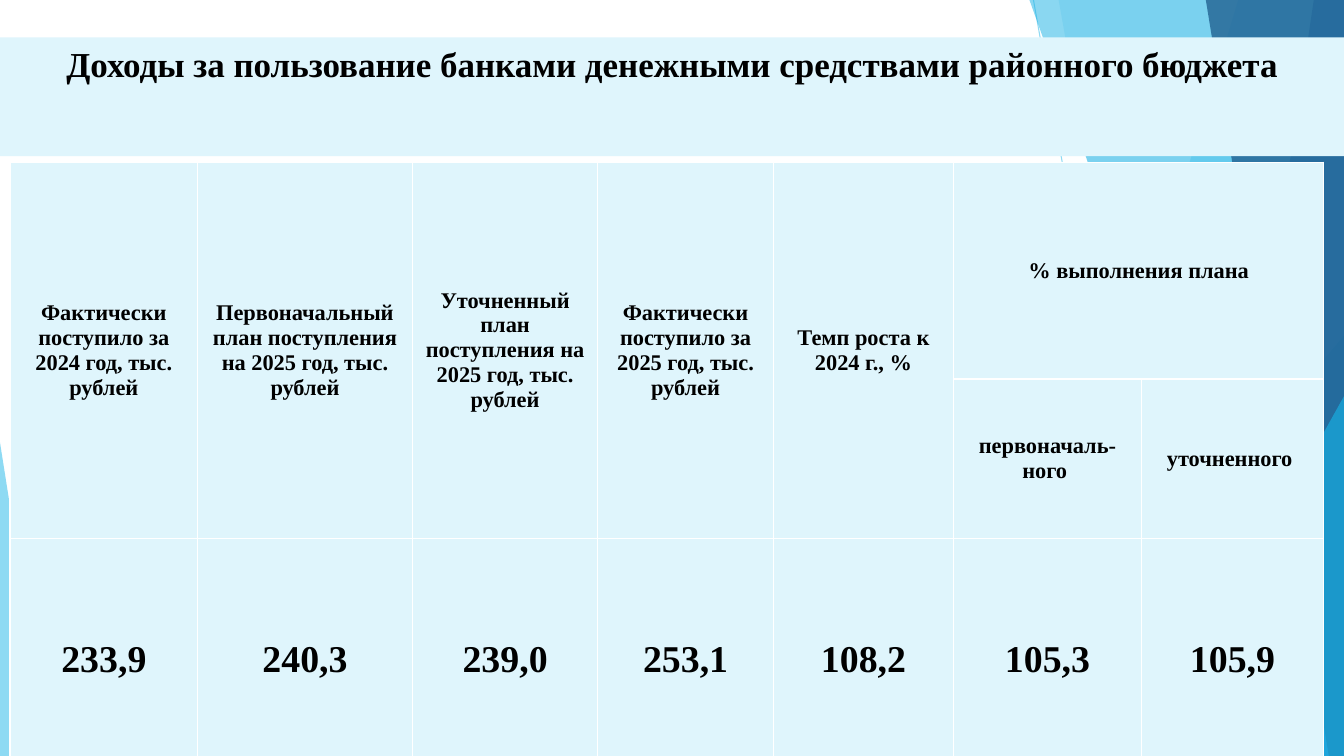
"""Slide with a table of the income from bank use of district budget funds."""
import pptx
import pptx.util
import pptx.dml.color
import pptx.enum.shapes
import pptx.enum.text
import pptx.oxml.ns
import lxml.etree

Inches = pptx.util.Inches
qn = pptx.oxml.ns.qn
WIDE, TALL = 13.33, 7.5
PALE = "DFF5FC"


def tint(fill, code, share=100):
    fill.solid()
    fill.fore_color.rgb = pptx.dml.color.RGBColor.from_string(code)
    if share < 100:
        mark = fill._xPr.find(".//" + qn("a:srgbClr"))
        lxml.etree.SubElement(mark, qn("a:alpha")).set("val", str(share * 1000))


def write(frame, text, size, anchor):
    frame.text = text
    frame.word_wrap = True
    frame.vertical_anchor = anchor
    para = frame.paragraphs[0]
    para.alignment = pptx.enum.text.PP_ALIGN.CENTER
    font = para.runs[0].font
    font.name = "Times New Roman"
    font.size = pptx.util.Pt(size)
    font.bold = True
    tint(font.fill, "000000")


deck = pptx.Presentation()
deck.slide_width, deck.slide_height = Inches(WIDE), Inches(TALL)
slide = deck.slides.add_slide(deck.slide_layouts[5])
shapes = slide.shapes
title = shapes.title

rays = [(10.25, 0, 11.58, TALL), (WIDE, 4.03, 8.12, TALL)]
for ray in rays:
    line = shapes.add_connector(
        pptx.enum.shapes.MSO_CONNECTOR.STRAIGHT, *map(Inches, ray))
    line.line.width = pptx.util.Pt(0.75)
    tint(line.line.fill, "5FCBEF", 70)
    lxml.etree.SubElement(line._element.spPr, qn("a:effectLst"))

bands = [
    ("band", (12.28, 10.04), "5FCBEF", 36),
    ("band", (10.5, 11.83), "5FCBEF", 20),
    ("peak", (9.77, 3.33, WIDE, 1), "17B0E4", 66),
    ("band", (10.21, 12.91), "17B0E4", 50),
    ("band", (13.03, 11.92), "2E83C3", 70),
    ("band", (11.96, 13.18), "226292", 80),
    ("peak", (11.34, 3.93, WIDE, 1), "17B0E4", 66),
    ("peak", (0, 4.39, 0.49, 0), "5FCBEF", 70),
]
for kind, place, code, share in bands:
    if kind == "band":
        top, foot = place
        pen = shapes.build_freeform(Inches(top), 0)
        ends = [(WIDE, 0), (WIDE, TALL), (foot, TALL)]
        pen.add_line_segments([(Inches(x), Inches(y)) for x, y in ends])
        shape = pen.convert_to_shape()
    else:
        left, top, right, tip = place
        shape = shapes.add_shape(
            pptx.enum.shapes.MSO_SHAPE.ISOSCELES_TRIANGLE, Inches(left),
            Inches(top), Inches(right - left), Inches(TALL - top))
        shape.adjustments[0] = tip
    shape.shadow.inherit = False
    shape.line.fill.background()
    tint(shape.fill, code, share)

shapes._spTree.append(title._element)
title.left, title.top = 0, Inches(0.37)
title.width, title.height = Inches(WIDE), Inches(1.18)
tint(title.fill, PALE)
write(title.text_frame,
      "Доходы за пользование банками денежными средствами районного бюджета",
      25, pptx.enum.text.MSO_ANCHOR.TOP)

cols = [1.86, 2.13, 1.84, 1.74, 1.79, 1.86, 1.81]
rows = [2.15, 1.58, 2.41]
texts = [
    ["Фактически поступило за 2024 год, тыс. рублей",
     "Первоначальный план поступления на 2025 год, тыс. рублей",
     "Уточненный план поступления на 2025 год, тыс. рублей",
     "Фактически поступило за 2025 год, тыс. рублей",
     "Темп роста к 2024 г., %", "% выполнения плана", ""],
    ["", "", "", "", "", "первоначаль-ного ", "уточненного "],
    ["233,9", "240,3", "239,0", "253,1", "108,2", "105,3", "105,9"],
]
table = shapes.add_table(len(rows), len(cols), Inches(0.1), Inches(1.61),
                         Inches(sum(cols)), Inches(sum(rows))).table
table.horz_banding = False
for col, width in zip(table.columns, cols):
    col.width = Inches(width)
for row, height in zip(table.rows, rows):
    row.height = Inches(height)
for c in range(5):
    table.cell(0, c).merge(table.cell(1, c))
table.cell(0, 5).merge(table.cell(0, 6))

for r, line in enumerate(texts):
    for c, text in enumerate(line):
        cell = table.cell(r, c)
        tint(cell.fill, PALE)
        if text:
            cell.vertical_anchor = pptx.enum.text.MSO_ANCHOR.MIDDLE
            write(cell.text_frame, text, 27 if r == 2 else 16, None)

deck.save("out.pptx")
